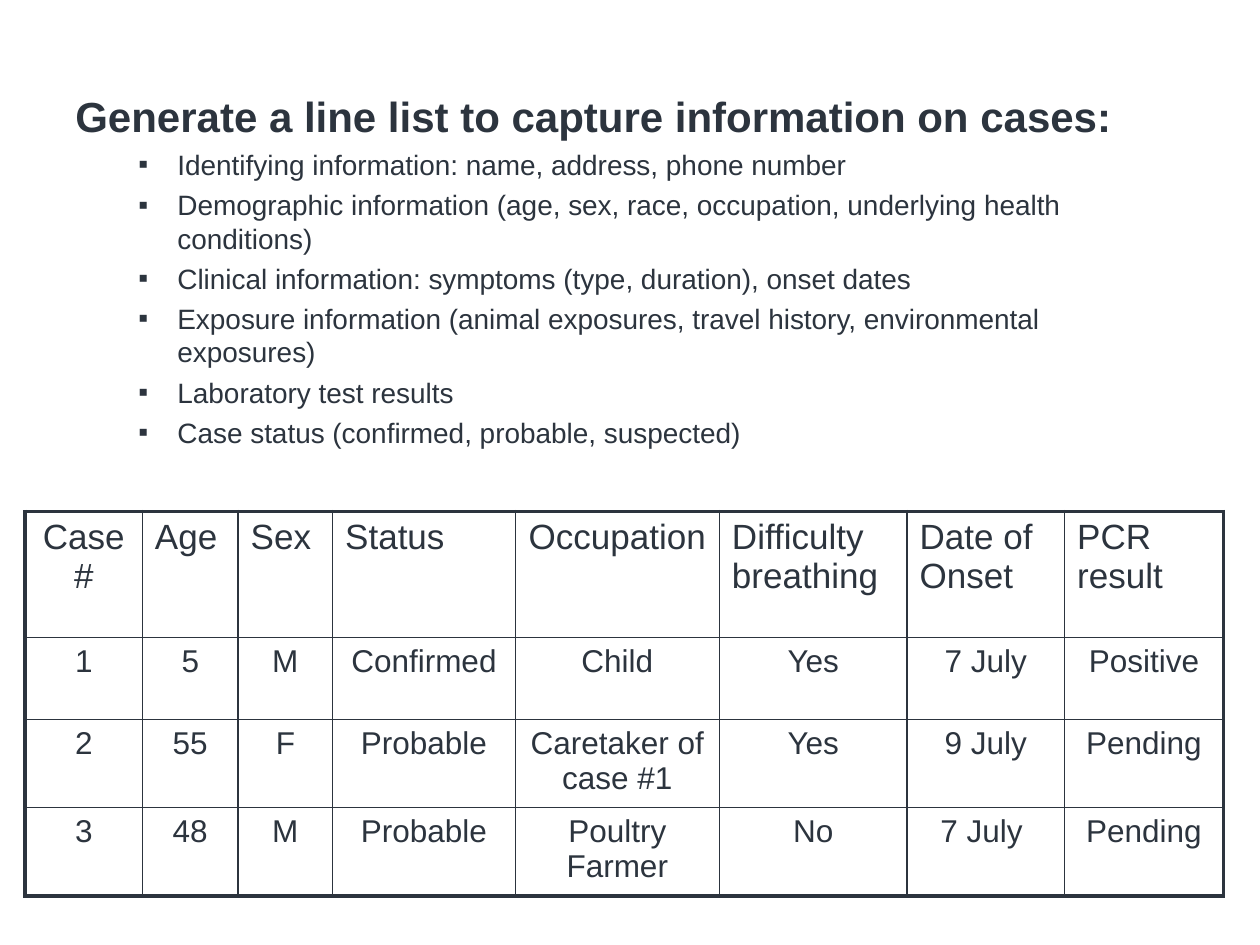
from lxml import etree
from pptx import Presentation
from pptx.dml.color import RGBColor
from pptx.enum.text import PP_ALIGN
from pptx.oxml.ns import qn
from pptx.util import Inches, Pt

LEFT, CENTER = PP_ALIGN.LEFT, PP_ALIGN.CENTER
INK = RGBColor(0x2C, 0x34, 0x3E)
FONT = "Arial"
THIN, THICK = Pt(1), Pt(2.25)

HEADING = "Generate a line list to capture information on cases:"
INFORMATION = [
    "Identifying information: name, address, phone number",
    "Demographic information (age, sex, race, occupation, underlying health conditions)",
    "Clinical information: symptoms (type, duration), onset dates",
    "Exposure information (animal exposures, travel history, environmental exposures)",
    "Laboratory test results",
    "Case status (confirmed, probable, suspected)",
]
LINE_LIST = [
    ["Case #", "Age", "Sex", "Status", "Occupation ", "Difficulty breathing", "Date of Onset", "PCR result"],
    ["1", "5", "M", "Confirmed", "Child", "Yes", "7 July", "Positive"],
    ["2", "55", "F", "Probable", "Caretaker of case #1", "Yes", "9 July", "Pending"],
    ["3", "48", "M", "Probable", "Poultry Farmer", "No", "7 July ", "Pending"],
]
COLUMN_WIDTHS = [0.93, 0.76, 0.75, 1.45, 1.62, 1.49, 1.25, 1.26]
ROW_HEIGHTS = [1, 0.65, 0.64, 0.64]
CENTERED_HEADERS = ("Case #", "Occupation ")


def write(paragraph, text, size, bold=False):
    paragraph.text = text
    for name, value in {"name": FONT, "size": Pt(size), "bold": bold}.items():
        setattr(paragraph.font, name, value)
    paragraph.font.color.rgb = INK


def add_border(cell, side, width):
    line = etree.SubElement(cell._tc.get_or_add_tcPr(), qn(f"a:ln{side}"), w=str(width))
    fill = etree.SubElement(line, qn("a:solidFill"))
    etree.SubElement(fill, qn("a:srgbClr"), val=str(INK))


prs = Presentation()
prs.slide_width, prs.slide_height = Inches(10), Inches(7.5)
W, H = prs.slide_width, prs.slide_height
slide = prs.slides.add_slide(prs.slide_layouts[6])

guidance = slide.shapes.add_textbox(int(W * 0.05), Inches(0.64), int(W * 0.9), Inches(5.44)).text_frame
guidance.word_wrap = True
guidance.margin_top = Inches(0.08)
write(guidance.paragraphs[0], HEADING, 24, True)

for item in INFORMATION:
    paragraph = guidance.add_paragraph()
    paragraph.level = 1
    properties = paragraph._p.get_or_add_pPr()
    properties.set("marL", str(Inches(0.81)))
    properties.set("indent", str(Inches(-0.31)))
    bullet_color = etree.SubElement(properties, qn("a:buClr"))
    etree.SubElement(bullet_color, qn("a:srgbClr"), val=str(INK))
    etree.SubElement(properties, qn("a:buFont"), typeface=FONT)
    etree.SubElement(properties, qn("a:buChar"), char="▪")
    paragraph.space_before = Pt(3.7)
    write(paragraph, item, 16)

cases = slide.shapes.add_table(
    len(ROW_HEIGHTS), len(COLUMN_WIDTHS), int(W * 0.02), Inches(4.06),
    Inches(sum(COLUMN_WIDTHS)), Inches(sum(ROW_HEIGHTS)),
).table
cases.first_row = cases.horz_banding = False
for column, width in zip(cases.columns, COLUMN_WIDTHS):
    column.width = Inches(width)
for row, height in zip(cases.rows, ROW_HEIGHTS):
    row.height = Inches(height)

last_row, last_column = len(ROW_HEIGHTS) - 1, len(COLUMN_WIDTHS) - 1
for r, record in enumerate(LINE_LIST):
    for c, value in enumerate(record):
        cell = cases.cell(r, c)
        paragraph = cell.text_frame.paragraphs[0]
        write(paragraph, value, 18 if r else 20)
        paragraph.alignment = CENTER if r or value in CENTERED_HEADERS else LEFT
        outer = {"L": c == 0, "R": c == last_column, "T": r == 0, "B": r == last_row}
        for side, on_edge in outer.items():
            add_border(cell, side, THICK if on_edge else THIN)
        cell.fill.background()

prs.save("out.pptx")
